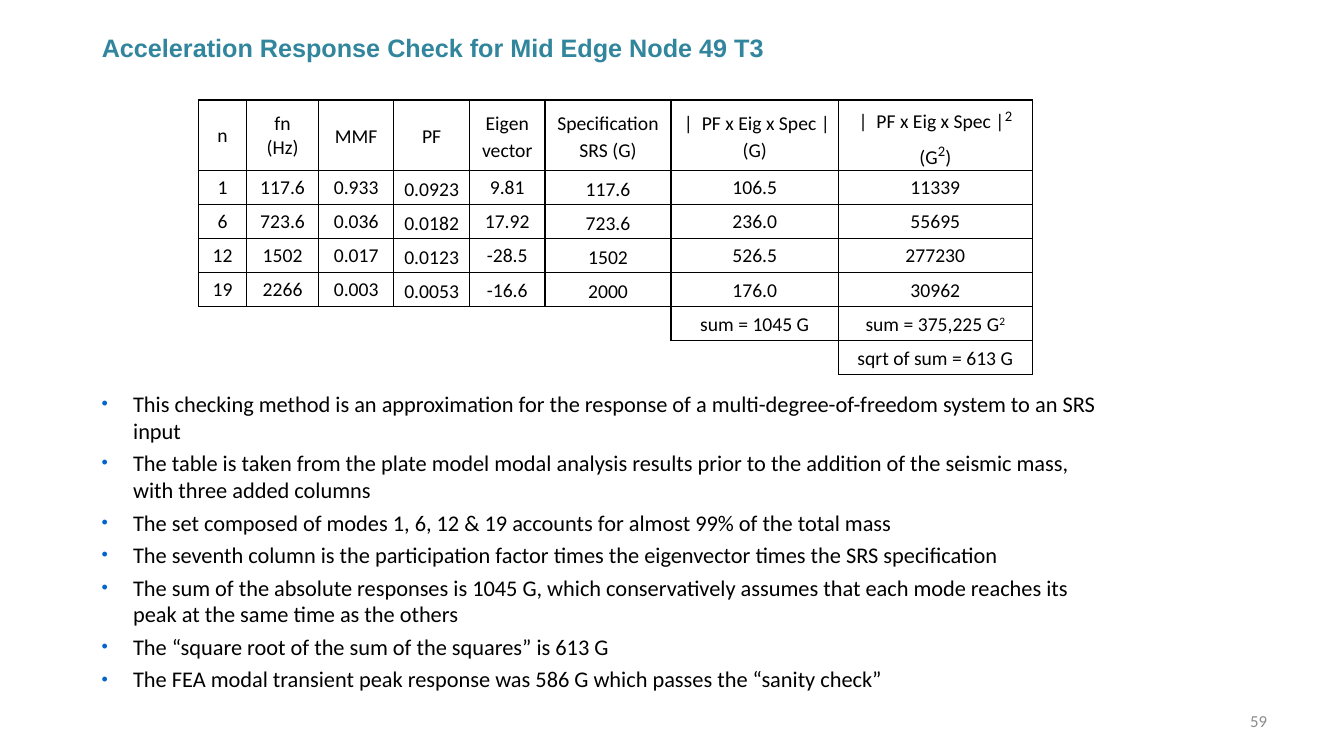
from dataclasses import dataclass

from lxml.etree import SubElement
from pptx import Presentation
from pptx.dml.color import RGBColor
from pptx.enum.text import MSO_ANCHOR, MSO_AUTO_SIZE, PP_ALIGN
from pptx.oxml import parse_xml
from pptx.oxml.ns import nsdecls, qn
from pptx.util import Pt


@dataclass(frozen=True)
class Theme:
    heading_font: str = "Arial"
    body_font: str = "Calibri"
    heading: str = "31859C"
    ink: str = "000000"
    muted: str = "8C8C8C"
    bullet: str = "0066CC"
    title_size: float = 18
    body_size: float = 16
    table_size: float = 14
    header_power_size: float = 18
    number_size: float = 12


THEME = Theme()
PLAIN_TABLE_STYLE = "{2D5ABB26-0587-4C30-8999-92F81FD0307C}"

TITLE = "Acceleration Response Check for Mid Edge Node 49 T3"
# Text between carets is superscript
ROWS = [
    ["n", "fn\n(Hz)", "MMF", "PF", "Eigen\nvector", "Specification\nSRS (G)",
     " |  PF x Eig x Spec |\n(G)", "|  PF x Eig x Spec |^2^\n(G^2^)"],
    ["1", "117.6", "0.933", "0.0923", "9.81", "117.6", "106.5", "11339"],
    ["6", "723.6", "0.036", "0.0182", "17.92", "723.6", "236.0", "55695"],
    ["12", "1502", "0.017", "0.0123", "-28.5", "1502", "526.5", "277230"],
    ["19", "2266", "0.003", "0.0053", "-16.6", "2000", "176.0", "30962"],
    [""] * 6 + ["sum = 1045 G", "sum = 375,225 G^2^"],
    [""] * 7 + ["sqrt of sum = 613 G"],
]
COLUMN_WIDTHS = [34.4, 51.4, 53.8, 54, 54, 90, 119.6, 138.4]
HEADER_HEIGHT, ROW_HEIGHT = 49.8, 24.3
BULLETS = [
    "This checking method is an approximation for the response of a "
    "multi-degree-of-freedom system to an SRS input",
    "The table is taken from the plate model modal analysis results prior to the "
    "addition of the seismic mass, with three added columns",
    "The set composed of modes 1, 6, 12 & 19 accounts for almost 99% of the total mass",
    "The seventh column is the participation factor times the eigenvector times the "
    "SRS specification",
    "The sum of the absolute responses is 1045 G, which conservatively assumes that "
    "each mode reaches its peak at the same time as the others",
    "The “square root of the sum of the squares” is 613 G",
    "The FEA modal transient peak response was 586 G which passes the “sanity check”",
]


def write(frame, text, *, size, color=THEME.ink, font=THEME.body_font, bold=False,
          align=PP_ALIGN.LEFT, line_spacing=None, gap=0, power_size=None):
    """Write one paragraph per line of text, with superscript between carets."""
    for index, line in enumerate(text.split("\n")):
        para = frame.add_paragraph() if index else frame.paragraphs[0]
        para.alignment = align
        para.space_before = para.space_after = Pt(gap)
        if line_spacing:
            para.line_spacing = line_spacing
        for part, piece in enumerate(line.split("^")):
            if not piece:
                continue
            span = para.add_run()
            span.text = piece
            raised = part % 2 == 1
            span.font.size = Pt(power_size if raised and power_size else size)
            span.font.name = font
            span.font.bold = bold
            span.font.color.rgb = RGBColor.from_string(color)
            if raised:
                span.font._element.set("baseline", "30000")


def place(shape, box):
    shape.left, shape.top, shape.width, shape.height = map(Pt, box)
    frame = shape.text_frame
    frame.word_wrap = True
    frame.auto_size = MSO_AUTO_SIZE.NONE
    return frame


def add_title(page, box):
    frame = place(page.shapes.title, box)
    frame.vertical_anchor = MSO_ANCHOR.TOP
    write(frame, TITLE, size=THEME.title_size, color=THEME.heading,
          font=THEME.heading_font, bold=True, gap=2)


def set_borders(cell, sides):
    properties = cell._tc.get_or_add_tcPr()
    for index, (tag, drawn) in enumerate(sides.items()):
        paint = (f'<a:solidFill><a:srgbClr val="{THEME.ink}"/></a:solidFill>'
                 if drawn else "<a:noFill/>")
        line = f'<a:{tag} {nsdecls("a")} w="{Pt(1)}">{paint}</a:{tag}>'
        properties.insert(index, parse_xml(line))


def is_filled(row, column):
    inside = 0 <= row < len(ROWS) and 0 <= column < len(COLUMN_WIDTHS)
    return inside and ROWS[row][column] != ""


def add_response_table(page, left, top):
    height = HEADER_HEIGHT + ROW_HEIGHT * (len(ROWS) - 1)
    holder = page.shapes.add_table(len(ROWS), len(COLUMN_WIDTHS), Pt(left), Pt(top),
                                   Pt(sum(COLUMN_WIDTHS)), Pt(height))
    table = holder.table
    table.first_row = table.horz_banding = False
    next(holder.element.iter(qn("a:tableStyleId"))).text = PLAIN_TABLE_STYLE
    for column, width in zip(table.columns, COLUMN_WIDTHS):
        column.width = Pt(width)
    for index, row in enumerate(table.rows):
        row.height = Pt(ROW_HEIGHT if index else HEADER_HEIGHT)

    for r, values in enumerate(ROWS):
        for c, value in enumerate(values):
            cell = table.cell(r, c)
            cell.fill.background()
            cell.vertical_anchor = MSO_ANCHOR.MIDDLE
            tight = r > 0 and c in (4, 6, 7)
            cell.margin_left = cell.margin_right = Pt(0.7 if tight else 5)
            cell.margin_top = Pt(0.7 if tight else 0)
            cell.margin_bottom = Pt(0)
            # An edge is drawn when the cell on either side of it holds text
            here = is_filled(r, c)
            set_borders(cell, {"lnL": here or is_filled(r, c - 1),
                               "lnR": here or is_filled(r, c + 1),
                               "lnT": here or is_filled(r - 1, c),
                               "lnB": here or is_filled(r + 1, c)})
            loose = c >= 2 if r == 0 else c in (3, 5)
            write(cell.text_frame, value, size=THEME.table_size, align=PP_ALIGN.CENTER,
                  line_spacing=1.15 if loose else None,
                  power_size=THEME.header_power_size if r == 0 else None)


def add_bullets(page, box):
    frame = place(page.shapes.add_textbox(0, 0, 0, 0), box)
    write(frame, "\n".join(BULLETS), size=THEME.body_size, gap=2)
    for para in frame.paragraphs:
        properties = para._p.get_or_add_pPr()
        properties.set("marL", str(Pt(22.5)))
        properties.set("indent", str(-Pt(22.5)))
        color = SubElement(properties, qn("a:buClr"))
        SubElement(color, qn("a:srgbClr"), val=THEME.bullet)
        SubElement(properties, qn("a:buSzPct"), val="80000")
        SubElement(properties, qn("a:buFont"), typeface=THEME.heading_font)
        SubElement(properties, qn("a:buChar"), char="•")


def add_page_number(page, box):
    frame = place(page.shapes.add_textbox(0, 0, 0, 0), box)
    frame.vertical_anchor = MSO_ANCHOR.MIDDLE
    write(frame, "59", size=THEME.number_size, color=THEME.muted, align=PP_ALIGN.RIGHT)


def main():
    deck = Presentation()
    deck.slide_width, deck.slide_height = Pt(960), Pt(540)
    page = deck.slides.add_slide(deck.slide_layouts[5])
    add_page_number(page, (688.3, 500.5, 224, 28.8))
    add_response_table(page, 141.8, 71.5)
    add_bullets(page, (65.5, 275, 733.7, 225.4))
    add_title(page, (65.5, 19.4, 615, 29))
    deck.save("out.pptx")


if __name__ == "__main__":
    main()
